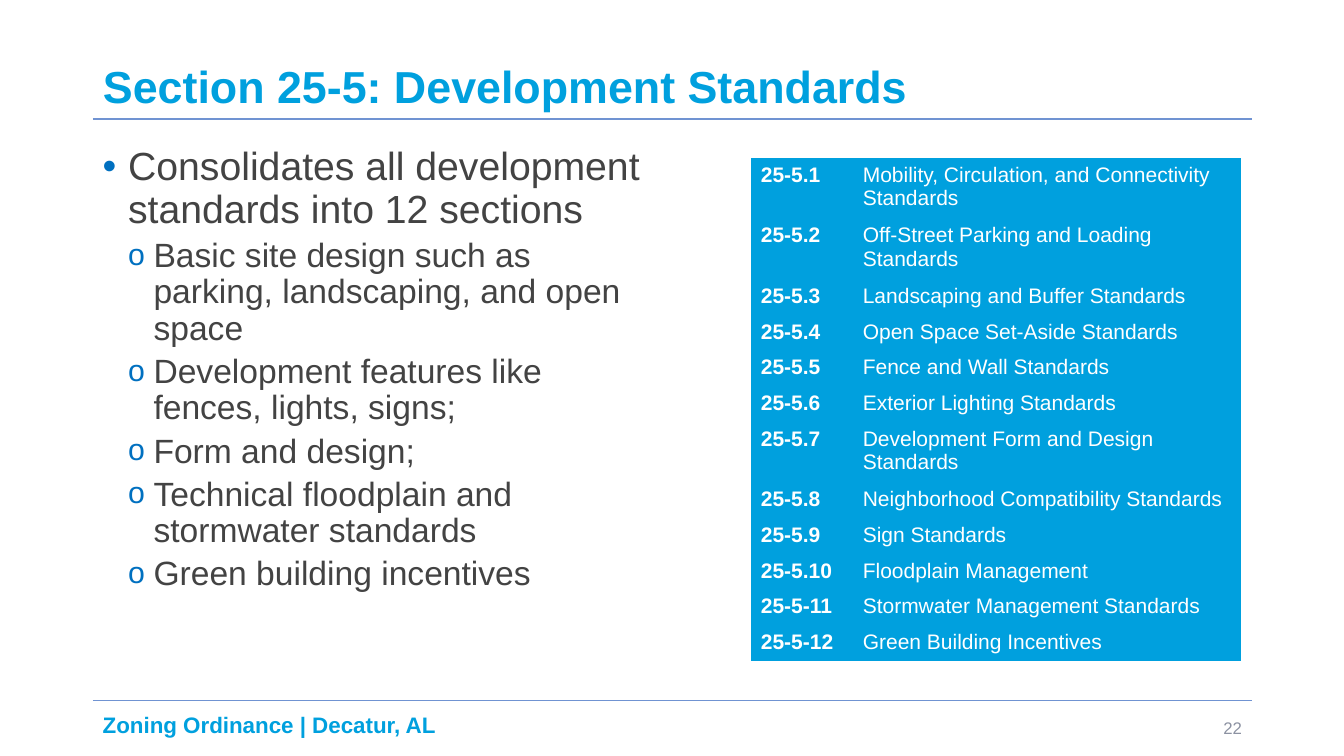
from lxml import etree
from pptx import Presentation
from pptx import util as u
from pptx.dml.color import RGBColor
from pptx.enum import shapes, text
from pptx.oxml.ns import qn

FONT = "Arial"
BLUE, RULE, BULLET = "00A0DE", "7093D2", "0070C0"
BODY, GREY, WHITE = "434343", "8C92A2", "FFFFFF"
NO_STYLE = "{2D5ABB26-0587-4C30-8999-92F81FD0307C}"
LEFT, WIDTH = 2.34, 29.21
INDENT = 0.64

POINTS = [
    (0, "Consolidates all development standards into 12 sections"),
    (1, "Basic site design such as parking, landscaping, and open space"),
    (1, "Development features like fences, lights, signs;"),
    (1, "Form and design;"),
    (1, "Technical floodplain and stormwater standards"),
    (1, "Green building incentives"),
]
# Per level: bullet character, bullet size in percent, text size, space before
LEVELS = [("•", 100, 28, 10), ("o", 90, 24, 5)]

SECTIONS = [
    ("25-5.1", "Mobility, Circulation, and Connectivity Standards"),
    ("25-5.2", "Off-Street Parking and Loading Standards"),
    ("25-5.3", "Landscaping and Buffer Standards"),
    ("25-5.4", "Open Space Set-Aside Standards"),
    ("25-5.5", "Fence and Wall Standards"),
    ("25-5.6", "Exterior Lighting Standards"),
    ("25-5.7", "Development Form and Design Standards"),
    ("25-5.8", "Neighborhood Compatibility Standards"),
    ("25-5.9", "Sign Standards"),
    ("25-5.10", "Floodplain Management"),
    ("25-5-11", "Stormwater Management Standards"),
    ("25-5-12", "Green Building Incentives"),
]


def colour(value):
    return RGBColor.from_string(value)


def lengths(box):
    return [u.Cm(value) for value in box]


def add_run(paragraph, words, size, hex_colour, bold=False):
    run = paragraph.add_run()
    run.text = words
    run.font.name = FONT
    run.font.size = u.Pt(size)
    run.font.bold = bold
    run.font.color.rgb = colour(hex_colour)


def add_text_frame(slide, box, anchor):
    frame = slide.shapes.add_textbox(*lengths(box)).text_frame
    frame.word_wrap = True
    frame.vertical_anchor = anchor
    return frame


def add_rule(slide, top):
    line = slide.shapes.add_connector(
        shapes.MSO_CONNECTOR.STRAIGHT, *lengths((LEFT, top, LEFT + WIDTH, top)))
    line.line.color.rgb = colour(RULE)
    line.line.width = u.Pt(1)
    etree.SubElement(line._element.spPr, qn("a:effectLst"))


def add_title(slide, box, words):
    left, top, width, height = box
    title = slide.shapes.title
    title.left, title.top, title.width, title.height = lengths(box)
    frame = title.text_frame
    frame.word_wrap = True
    frame.auto_size = text.MSO_AUTO_SIZE.NONE
    frame.vertical_anchor = text.MSO_ANCHOR.BOTTOM
    paragraph = frame.paragraphs[0]
    paragraph.alignment = text.PP_ALIGN.LEFT
    paragraph.line_spacing = 0.9
    add_run(paragraph, words, 32, BLUE, bold=True)
    add_rule(slide, top + height + 0.02)


def add_bullet(paragraph, character, percent, level):
    properties = paragraph._p.get_or_add_pPr()
    properties.set("marL", str(u.Cm(INDENT * (level + 1))))
    properties.set("indent", str(-u.Cm(INDENT)))
    bullet_colour = etree.SubElement(properties, qn("a:buClr"))
    etree.SubElement(bullet_colour, qn("a:srgbClr"), val=BULLET)
    etree.SubElement(properties, qn("a:buSzPct"), val=str(percent * 1000))
    etree.SubElement(properties, qn("a:buFont"), typeface=FONT)
    etree.SubElement(properties, qn("a:buChar"), char=character)


def add_points(slide, box):
    frame = add_text_frame(slide, box, text.MSO_ANCHOR.TOP)
    for index, (level, words) in enumerate(POINTS):
        character, percent, size, space = LEVELS[level]
        paragraph = frame.add_paragraph() if index else frame.paragraphs[0]
        paragraph.level = level
        add_bullet(paragraph, character, percent, level)
        paragraph.line_spacing = 0.9
        paragraph.space_before = u.Pt(space if index else 0)
        add_run(paragraph, words, size, BODY)


def add_section_table(slide, box):
    number_width = 2.57
    table = slide.shapes.add_table(len(SECTIONS), 2, *lengths(box)).table
    table.first_row = table.horz_banding = False
    table._tbl.tblPr.find(qn("a:tableStyleId")).text = NO_STYLE
    table.columns[0].width = u.Cm(number_width)
    table.columns[1].width = u.Cm(box[2] - number_width)
    for row, section in zip(table.rows, SECTIONS):
        row.height = u.Cm(0.9)
        for column, words in enumerate(section):
            cell = row.cells[column]
            cell.fill.solid()
            cell.fill.fore_color.rgb = colour(BLUE)
            add_run(cell.text_frame.paragraphs[0], words, 15, WHITE, bold=column == 0)


def add_footer(slide, box):
    left, top, width, height = box
    add_rule(slide, top - 0.1)
    number_width = 7.62
    number_left = left + width - number_width
    name = add_text_frame(slide, (left, top, 13.31, height), text.MSO_ANCHOR.MIDDLE)
    name.paragraphs[0].line_spacing = 0.9
    add_run(name.paragraphs[0], "Zoning Ordinance | Decatur, AL", 16, BLUE, bold=True)
    number = add_text_frame(
        slide, (number_left, top + 0.08, number_width, 1.02), text.MSO_ANCHOR.MIDDLE)
    number.paragraphs[0].alignment = text.PP_ALIGN.RIGHT
    add_run(number.paragraphs[0], "22", 12, GREY)


def main():
    presentation = Presentation()
    presentation.slide_width, presentation.slide_height = lengths((33.87, 19.05))
    slide = presentation.slides.add_slide(presentation.slide_layouts.get_by_name("Title Only"))
    add_title(slide, (LEFT, 1.02, WIDTH, 1.96), "Section 25-5: Development Standards")
    add_points(slide, (LEFT, 3.58, 14.5, 13.59))
    add_section_table(slide, (18.92, 3.99, 12.35, 10.8))
    add_footer(slide, (LEFT, 17.75, WIDTH, 1.09))
    presentation.save("out.pptx")


if __name__ == "__main__":
    main()
